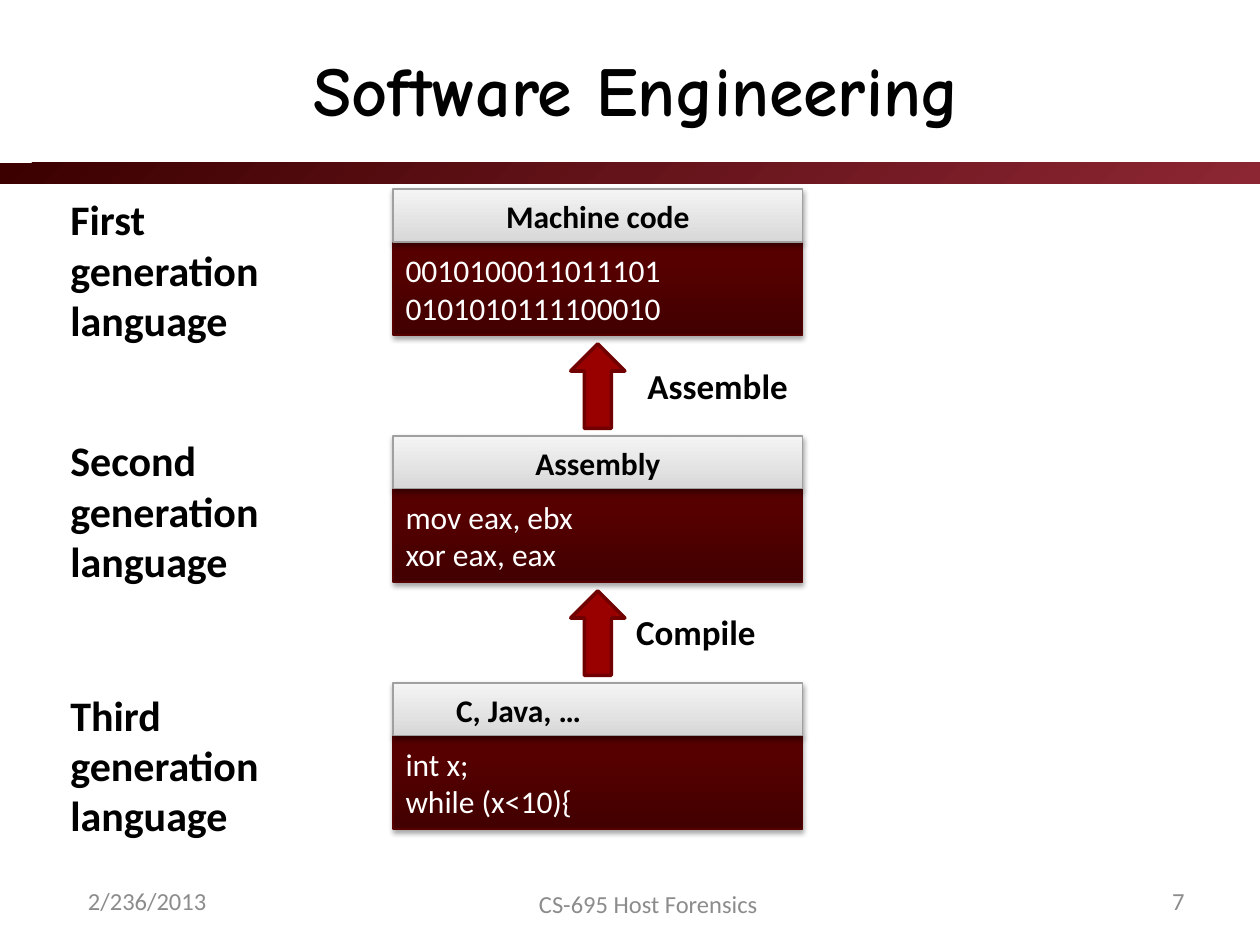
from dataclasses import dataclass

from lxml import etree
from pptx import Presentation
from pptx.dml.color import RGBColor
from pptx.enum.shapes import MSO_SHAPE
from pptx.enum.text import MSO_ANCHOR, PP_ALIGN
from pptx.oxml.ns import qn
from pptx.util import Emu, Pt

RECT, UP_ARROW = MSO_SHAPE.RECTANGLE, MSO_SHAPE.UP_ARROW
TOP, MIDDLE = MSO_ANCHOR.TOP, MSO_ANCHOR.MIDDLE
LEFT, CENTER, RIGHT = PP_ALIGN.LEFT, PP_ALIGN.CENTER, PP_ALIGN.RIGHT
EMU_PER_PX = 9144  # 100 px to the inch


@dataclass(frozen=True)
class Theme:
    title_font: str = "Comic Neue"
    font: str = "Calibri"
    title_size: int = 40
    label_size: int = 24
    step_size: int = 20
    box_size: int = 18
    footer_size: int = 14
    ink: str = "000000"
    paper: str = "FFFFFF"
    muted: str = "8C8C8C"
    # Gradients are (position, colour) pairs
    band: tuple = ((0, "3C0000"), (1, "8C2633"))
    code: tuple = ((0, "420000"), (0.8, "570000"))
    code_line: str = "570000"
    header: tuple = ((0, "D8D8D8"), (1, "F4F4F4"))
    header_line: str = "A0A0A0"
    arrow: str = "990000"
    arrow_line: str = "710000"


THEME = Theme()

# label, label offset, header, header indent (None = centred), code lines
GENERATIONS = [
    ("First", -1, "Machine code", None, ["0010100011011101", "0101010111100010"]),
    ("Second", -6, "Assembly", None, ["mov eax, ebx", "xor eax, eax"]),
    ("Third", 0, "C, Java, …", 50, ["int x;", "while (x<10){"]),
]
STEPS = [("Assemble", 504, 133), ("Compile", 495, 116)]  # text, left, width
FIRST_TOP, PITCH = 150, 196
BOX_LEFT, BOX_W, HEADER_H, CODE_H = 312, 325, 42, 74
ARROW_W, ARROW_H, ARROW_GAP = 43, 67, 7


def px(n):
    return Emu(round(n * EMU_PER_PX))


def rgb(color):
    return RGBColor.from_string(color)


def write(shape, lines, size, color, bold=False, align=LEFT, anchor=MIDDLE,
          font=THEME.font, wrap=True):
    tf = shape.text_frame
    tf.word_wrap = wrap
    tf.vertical_anchor = anchor
    tf.text = "\n".join(lines)
    for p in tf.paragraphs:
        p.alignment = align
        p.font.name, p.font.size, p.font.bold = font, Pt(size), bold
        p.font.color.rgb = rgb(color)


def add_text(shapes, box, lines, size, color, **style):
    write(shapes.add_textbox(*map(px, box)), lines, size, color, **style)


def fill_gradient(shape, stops, angle):
    shape.fill.gradient()
    shape.fill.gradient_angle = angle
    for stop, (position, color) in zip(shape.fill.gradient_stops, stops):
        stop.position = position
        stop.color.rgb = rgb(color)


def add_shadow(shape, alpha, distance):
    """Put a soft shadow straight below the shape; distance is in points."""
    shape.shadow.inherit = False
    effects = shape._element.spPr.find(qn("a:effectLst"))
    outer = etree.SubElement(effects, qn("a:outerShdw"), blurRad=str(Pt(3.1)),
                             dist=str(Pt(distance)), dir="5400000", rotWithShape="0")
    color = etree.SubElement(outer, qn("a:srgbClr"), val=THEME.ink)
    etree.SubElement(color, qn("a:alpha"), val=str(alpha * 1000))


def add_panel(shapes, box, stops, line, alpha, distance):
    s = shapes.add_shape(RECT, *map(px, box))
    fill_gradient(s, stops, 90)
    s.line.color.rgb = rgb(line)
    s.line.width = Pt(0.75)
    add_shadow(s, alpha, distance)
    return s


def add_band(slide, box):
    s = slide.shapes.add_shape(RECT, *map(px, box))
    fill_gradient(s, THEME.band, 315)
    s.line.fill.background()
    s.shadow.inherit = False


def add_title(slide, box, text):
    title = slide.shapes.title
    title.left, title.top, title.width, title.height = map(px, box)
    write(title, [text], THEME.title_size, THEME.ink, bold=True, align=CENTER,
          font=THEME.title_font)


def add_footer(slide, top):
    for text, left, dy, width, align in (
            ("2/236/2013", 60, 0, 183, LEFT),
            ("CS-695 Host Forensics", 390, 2, 249, CENTER),
            ("7", 767, 0, 183, RIGHT)):
        add_text(slide.shapes, (left, top + dy, width, 40), [text],
                 THEME.footer_size, THEME.muted, align=align)


def add_code_box(slide, left, top, header, indent, code):
    shapes = slide.shapes.add_group_shape().shapes
    body = add_panel(shapes, (left, top + HEADER_H, BOX_W, CODE_H),
                     THEME.code, THEME.code_line, 35, 1.8)
    write(body, code, THEME.box_size, THEME.paper)
    head = add_panel(shapes, (left, top, BOX_W, HEADER_H),
                     THEME.header, THEME.header_line, 38, 1.6)
    write(head, [header], THEME.box_size, THEME.ink, bold=True,
          align=CENTER if indent is None else LEFT)
    if indent is not None:
        head.text_frame.margin_left = px(indent)


def add_step(slide, top, text, text_left, text_width):
    left = BOX_LEFT + (BOX_W - ARROW_W) // 2
    s = slide.shapes.add_shape(UP_ARROW, *map(px, (left, top, ARROW_W, ARROW_H)))
    s.fill.solid()
    s.fill.fore_color.rgb = rgb(THEME.arrow)
    s.line.color.rgb = rgb(THEME.arrow_line)
    s.line.width = Pt(2)
    s.shadow.inherit = False
    add_text(slide.shapes, (text_left, top + 11, text_width, 44), [text],
             THEME.step_size, THEME.ink, bold=True, anchor=TOP, wrap=False)


def add_generations(slide, top):
    for i, (name, offset, header, indent, code) in enumerate(GENERATIONS):
        y = top + i * PITCH
        add_code_box(slide, BOX_LEFT, y, header, indent, code)
        add_text(slide.shapes, (46, y + offset, 179, 131),
                 [name, "generation", "language"], THEME.label_size, THEME.ink,
                 bold=True, anchor=TOP, wrap=False)
    for i, step in enumerate(STEPS):
        add_step(slide, top + i * PITCH + HEADER_H + CODE_H + ARROW_GAP, *step)


def main():
    prs = Presentation()
    prs.slide_width, prs.slide_height = px(1000), px(750)
    slide = prs.slides.add_slide(prs.slide_layouts[5])
    add_band(slide, (0, 129, 1000, 17))
    add_title(slide, (60, 15, 890, 110), "Software Engineering")
    add_footer(slide, 695)
    add_generations(slide, FIRST_TOP)
    prs.save("out.pptx")


if __name__ == "__main__":
    main()
